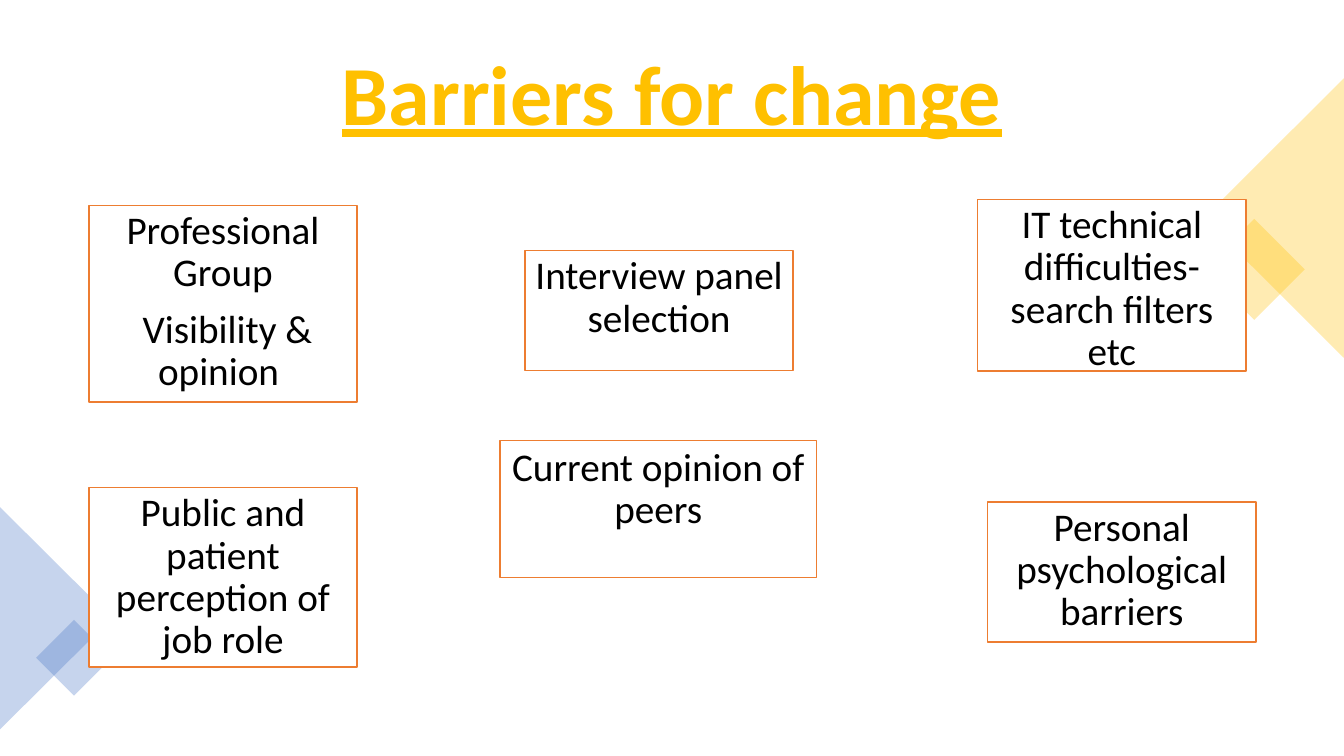
from dataclasses import dataclass

from lxml.etree import SubElement
from pptx import Presentation
from pptx.dml.color import RGBColor
from pptx.enum.shapes import MSO_SHAPE as Preset
from pptx.enum.text import MSO_ANCHOR as Anchor, PP_ALIGN as Align
from pptx.oxml.ns import qn
from pptx.util import Cm, Pt


@dataclass(frozen=True)
class Theme:
    font: str = "Calibri"
    gold: RGBColor = RGBColor(0xFF, 0xC0, 0x00)
    blue: RGBColor = RGBColor(0x44, 0x72, 0xC4)
    orange: RGBColor = RGBColor(0xED, 0x7D, 0x31)
    white: RGBColor = RGBColor(0xFF, 0xFF, 0xFF)
    black: RGBColor = RGBColor(0x00, 0x00, 0x00)
    title_size: Pt = Pt(60)
    body_size: Pt = Pt(28)
    opacity: int = 30


theme = Theme()


def add_filled_shape(preset, left, top, width, height, color):
    shape = slide.shapes.add_shape(preset, Cm(left), Cm(top), Cm(width), Cm(height))
    shape.shadow.inherit = False
    shape.fill.solid()
    shape.fill.fore_color.rgb = color
    return shape


def add_centred_run(paragraph, text, size, color):
    paragraph.alignment = Align.CENTER
    paragraph.line_spacing = 0.9
    run = paragraph.add_run()
    run.text = text
    run.font.name = theme.font
    run.font.size = size
    run.font.color.rgb = color
    return run


presentation = Presentation()
presentation.slide_width = Cm(33.87)
presentation.slide_height = Cm(19.05)
slide = presentation.slides.add_slide(presentation.slide_layouts[6])

# Title
title = slide.shapes.add_textbox(Cm(1.78), Cm(0.89), Cm(30.3), Cm(3.15))
title.text_frame.word_wrap = True
title.text_frame.vertical_anchor = Anchor.MIDDLE
title_run = add_centred_run(
    title.text_frame.paragraphs[0], "Barriers for change", theme.title_size, theme.gold
)
title_run.font.bold = True
title_run.font.underline = True

# Translucent corner decorations
decorations = [
    (Preset.RECTANGLE, 30.71, 5.89, 1.8, 1.8, 45, theme.gold),
    (Preset.ISOSCELES_TRIANGLE, 28.58, 3.73, 7.04, 3.53, 270, theme.gold),
    (Preset.ISOSCELES_TRIANGLE, -1.4, 14.17, 5.61, 2.82, 90, theme.blue),
    (Preset.RECTANGLE, 1.19, 15.9, 1.35, 1.35, 45, theme.blue),
]
for preset, left, top, width, height, rotation, color in decorations:
    decoration = add_filled_shape(preset, left, top, width, height, color)
    decoration.rotation = rotation
    decoration.line.fill.background()
    fill_color = decoration.fill._xPr.find(qn("a:solidFill"))[0]
    SubElement(fill_color, qn("a:alpha"), val=str(theme.opacity * 1000))

# Barrier boxes: left, top, width, height, top inset, paragraphs
barriers = [
    (2.24, 5.18, 6.76, 4.95, 0.13, ["Professional Group", " Visibility & opinion "]),
    (13.23, 6.32, 6.76, 3.02, 0.13, ["Interview panel selection"]),
    (24.64, 5.03, 6.76, 4.32, 0.13, ["IT technical difficulties- search filters etc"]),
    (24.89, 12.65, 6.76, 3.53, 0.13, ["Personal psychological barriers"]),
    (2.24, 12.29, 6.76, 4.52, 0.13, ["Public and patient perception of job role"]),
    (12.6, 11.1, 7.98, 3.45, 0.18, ["Current opinion of peers"]),
]
for left, top, width, height, inset, texts in barriers:
    box = add_filled_shape(Preset.RECTANGLE, left, top, width, height, theme.white)
    box.line.color.rgb = theme.orange
    box.line.width = Pt(1)
    frame = box.text_frame
    frame.word_wrap = True
    frame.vertical_anchor = Anchor.TOP
    frame.margin_top = Cm(inset)
    for index, text in enumerate(texts):
        paragraph = frame.add_paragraph() if index else frame.paragraphs[0]
        paragraph.space_before = Pt(10)
        add_centred_run(paragraph, text, theme.body_size, theme.black)

presentation.save("out.pptx")
